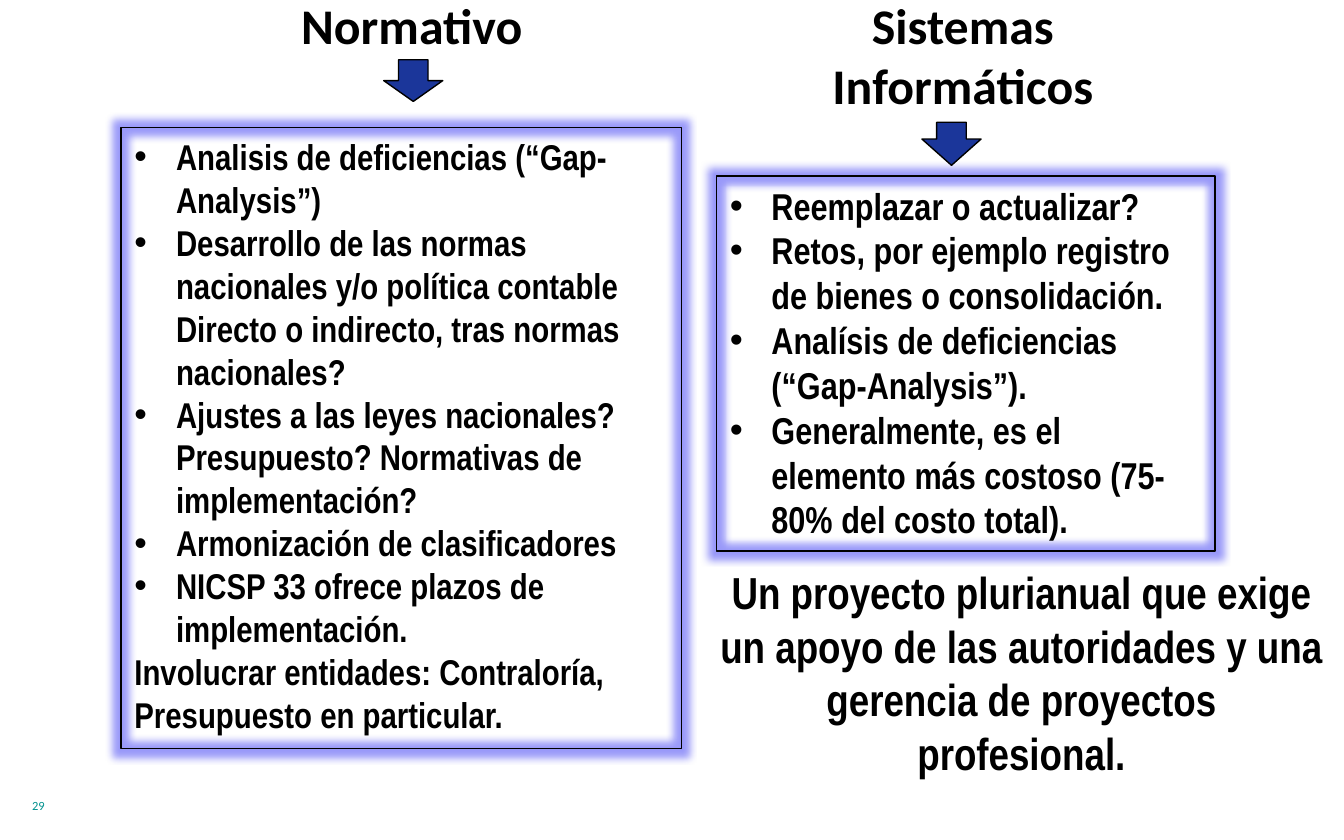
import dataclasses
import typing

import lxml.etree
import pptx
import pptx.dml.color
import pptx.enum.shapes
import pptx.enum.text
import pptx.oxml.ns
import pptx.util

COLUMNS, ROWS = 100, 62.5  # square cells on a 10 x 6.25 inch page
CELL = pptx.util.Inches(10) / COLUMNS
BLACK, NAVY, TEAL, GLOW = "000000", "1B369A", "00918E", "0000F0"
COMPARISON_LAYOUT = 4
HANGING = 3.1


@dataclasses.dataclass(frozen=True)
class Area:
    left: float
    top: float
    width: float
    height: float


@dataclasses.dataclass(frozen=True)
class Style:
    font: str
    size: float
    color: str = BLACK
    bold: bool = True
    centered: bool = False


@dataclasses.dataclass(frozen=True)
class Topic:
    heading: str
    heading_area: Area
    arrow_area: Area
    arrow_head: float
    bullets: typing.Tuple[str, ...]
    closing: typing.Tuple[str, ...]
    list_area: Area
    list_size: float
    placeholders: typing.Tuple[int, int]


TOPICS = (
    Topic(
        "Normativo", Area(13.9, -0.9, 33.5, 5.9), Area(28.55, 4.45, 4.4, 3.1), 0.5,
        (
            "Analisis de deficiencias (“Gap-Analysis”)",
            "Desarrollo de las normas nacionales y/o política contable "
            "Directo o indirecto, tras normas nacionales?",
            "Ajustes a las leyes nacionales? Presupuesto? "
            "Normativas de implementación?",
            "Armonización de clasificadores",
            "NICSP 33 ofrece plazos de implementación.",
        ),
        ("Involucrar entidades: Contraloría, Presupuesto en particular.",),
        Area(9, 9.5, 41.7, 46.2), 19.2, (1, 2),
    ),
    Topic(
        "Sistemas Informáticos", Area(53.9, -0.9, 35.5, 8.1),
        Area(68.6, 9.1, 4.4, 3.2), 0.61,
        (
            "Reemplazar o actualizar?",
            "Retos, por ejemplo registro de bienes o consolidación.",
            "Analísis de deficiencias (“Gap-Analysis”).",
            "Generalmente, es el elemento más costoso (75-80% del costo total).",
        ),
        (),
        Area(53.3, 13.1, 37.1, 27.9), 20, (3, 4),
    ),
)
CONCLUSION = (
    "Un proyecto plurianual que exige un apoyo de las autoridades "
    "y una gerencia de proyectos profesional."
)


def cells(count: float) -> int:
    return round(count * CELL)


def rgb(color: str) -> pptx.dml.color.RGBColor:
    return pptx.dml.color.RGBColor.from_string(color)


def add_element(parent: typing.Any, tag: str, **attributes: str) -> typing.Any:
    return lxml.etree.SubElement(parent, pptx.oxml.ns.qn(tag), **attributes)


def place(box: typing.Any, area: Area) -> None:
    box.left, box.top = cells(area.left), cells(area.top)
    box.width, box.height = cells(area.width), cells(area.height)


def outline(box: typing.Any) -> None:
    box.line.color.rgb = rgb(BLACK)
    box.line.width = pptx.util.Pt(0.75)
    box.shadow.inherit = False


def add_glow(box: typing.Any) -> None:
    effects = box._element.spPr.find(pptx.oxml.ns.qn("a:effectLst"))
    glow = add_element(effects, "a:glow", rad=str(pptx.util.Pt(8)))
    color = add_element(glow, "a:srgbClr", val=GLOW)
    add_element(color, "a:alpha", val="40000")


def write(box: typing.Any, lines: typing.Sequence[str], style: Style,
          bullet_count: int = 0) -> None:
    """Fill the box with paragraphs, the first bullet_count of them bulleted."""
    frame = box.text_frame
    frame.text = "\n".join(lines)
    frame.word_wrap = True
    frame.auto_size = pptx.enum.text.MSO_AUTO_SIZE.NONE
    frame.vertical_anchor = pptx.enum.text.MSO_ANCHOR.TOP
    align = pptx.enum.text.PP_ALIGN
    for index, para in enumerate(frame.paragraphs):
        bulleted = index < bullet_count
        para.alignment = align.CENTER if style.centered else align.LEFT
        para.space_before = pptx.util.Pt(0)
        properties = para._p.get_or_add_pPr()
        indent = cells(HANGING) if bulleted else 0
        properties.set("marL", str(indent))
        properties.set("indent", str(-indent))
        if bulleted:
            add_element(properties, "a:buChar", char="•")
        else:
            add_element(properties, "a:buNone")
        for span in para.runs:
            span.font.name = style.font
            span.font.size = pptx.util.Pt(style.size)
            span.font.bold = style.bold
            span.font.color.rgb = rgb(style.color)


def draw_topic(page: typing.Any, topic: Topic) -> None:
    heading, points = (page.placeholders[index] for index in topic.placeholders)
    place(heading, topic.heading_area)
    write(heading, [topic.heading], Style("Calibri", 26.7, centered=True))

    place(points, topic.list_area)
    outline(points)
    add_glow(points)
    write(points, topic.bullets + topic.closing,
          Style("Arial Narrow", topic.list_size), len(topic.bullets))

    area = topic.arrow_area
    arrow = page.shapes.add_shape(
        pptx.enum.shapes.MSO_SHAPE.DOWN_ARROW, cells(area.left), cells(area.top),
        cells(area.width), cells(area.height))
    arrow.adjustments[1] = topic.arrow_head
    arrow.fill.solid()
    arrow.fill.fore_color.rgb = rgb(NAVY)
    outline(arrow)


def main() -> None:
    deck = pptx.Presentation()
    deck.slide_width, deck.slide_height = cells(COLUMNS), cells(ROWS)
    page = deck.slides.add_slide(deck.slide_layouts[COMPARISON_LAYOUT])
    for topic in TOPICS:
        draw_topic(page, topic)

    conclusion = page.shapes.title
    place(conclusion, Area(52.4, 41.5, 47.2, 17.2))
    write(conclusion, [CONCLUSION], Style("Arial Narrow", 24, centered=True))

    number = page.shapes.add_textbox(
        cells(1.4), cells(58.9), cells(20.8), cells(3))
    write(number, ["29"], Style("Calibri", 6.7, TEAL, bold=False))
    deck.save("out.pptx")


if __name__ == "__main__":
    main()
